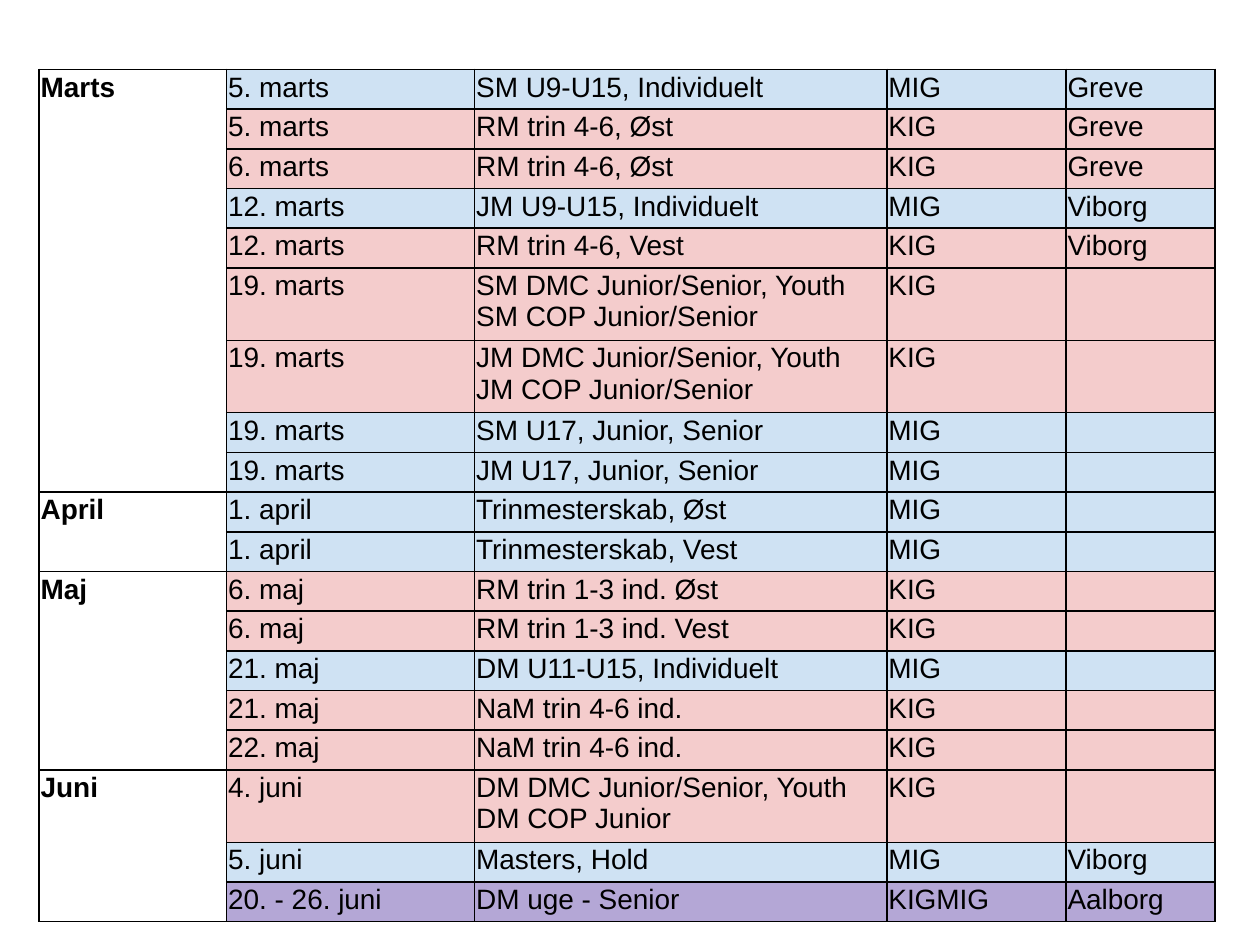
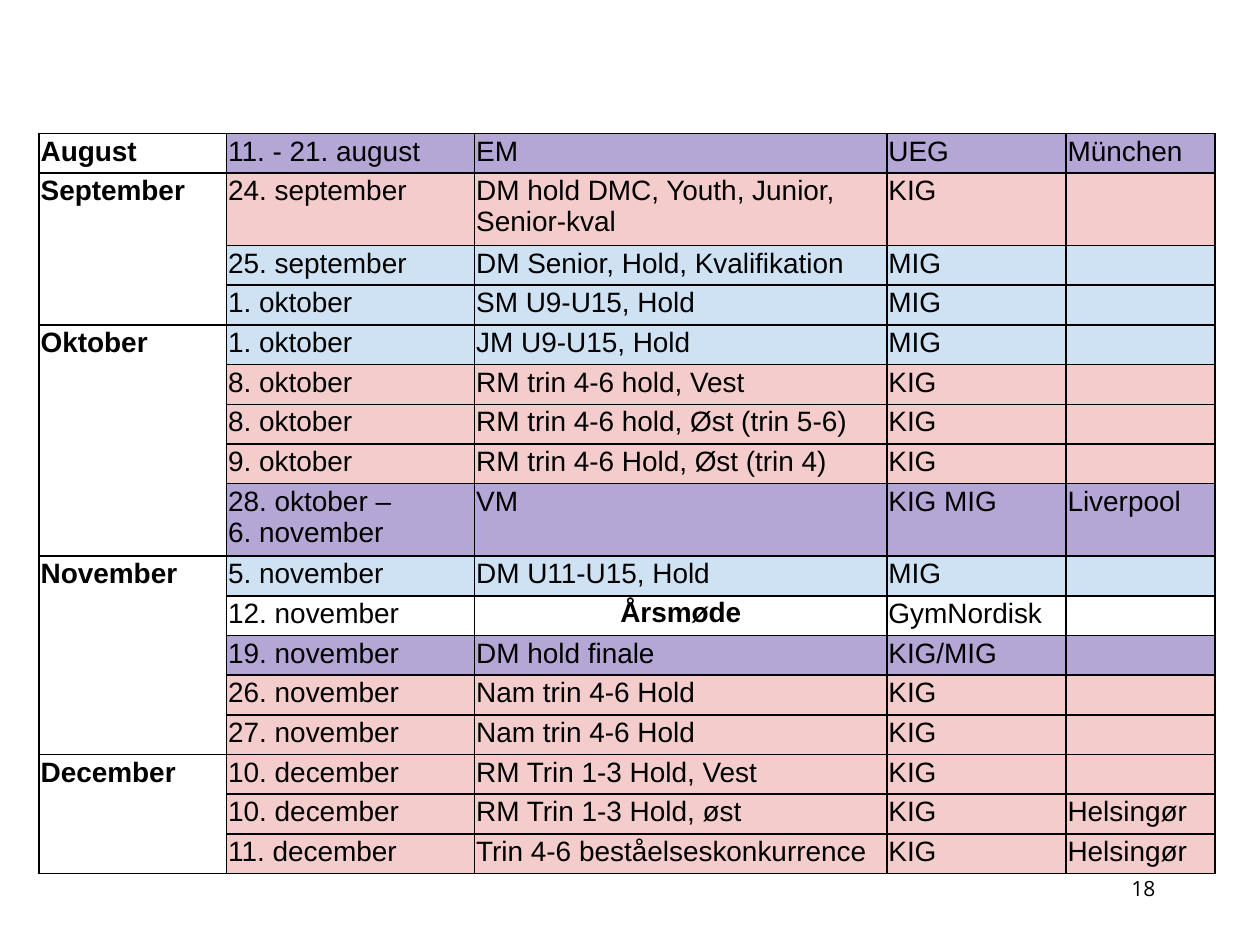
import pptx
import pptx.dml.color
import pptx.enum.text
import pptx.oxml.ns
import pptx.util
from lxml import etree

Cm = pptx.util.Cm
qn = pptx.oxml.ns.qn

HUES = {"ink": "000000", "men": "CFE2F3", "women": "F4CCCC", "joint": "B4A7D6"}
FILLS = {"MIG": "men", "KIG": "women", "GymNordisk": None}  # other hosts: joint

COLS = [3.78, 5, 8.31, 3.61, 3]
ROW, TALL = 0.8, 1.46
WRAP = 35  # longest event text that fits on one line
EDGES = ["a:lnL", "a:lnR", "a:lnT", "a:lnB"]

INSET = {"margin_left": Cm(0.03), "margin_right": Cm(0.03),
         "margin_top": Cm(0.05), "margin_bottom": Cm(0.05)}
SNUG = {"margin_top": Cm(0.03), "margin_bottom": 0}
BODY = {"name": "Arial", "size": pptx.util.Pt(16), "bold": False}
HEAD = {**BODY, "bold": True}
FOOT = {"name": "Open Sans", "size": pptx.util.Pt(12)}

SPRING = {
    "Marts": [
        ("5. marts", "SM U9-U15, Individuelt", "MIG", "Greve"),
        ("5. marts", "RM trin 4-6, Øst", "KIG", "Greve"),
        ("6. marts", "RM trin 4-6, Øst", "KIG", "Greve"),
        ("12. marts", "JM U9-U15, Individuelt", "MIG", "Viborg"),
        ("12. marts", "RM trin 4-6, Vest", "KIG", "Viborg"),
        ("19. marts", "SM DMC Junior/Senior, Youth\vSM COP Junior/Senior", "KIG", ""),
        ("19. marts", "JM DMC Junior/Senior, Youth\vJM COP Junior/Senior", "KIG", ""),
        ("19. marts", "SM U17, Junior, Senior", "MIG", ""),
        ("19. marts", "JM U17, Junior, Senior", "MIG", ""),
    ],
    "April": [
        ("1. april", "Trinmesterskab, Øst", "MIG", ""),
        ("1. april", "Trinmesterskab, Vest", "MIG", ""),
    ],
    "Maj": [
        ("6. maj", "RM trin 1-3 ind. Øst", "KIG", ""),
        ("6. maj", "RM trin 1-3 ind. Vest", "KIG", ""),
        ("21. maj", "DM U11-U15, Individuelt", "MIG", ""),
        ("21. maj", "NaM trin 4-6 ind.", "KIG", ""),
        ("22. maj", "NaM trin 4-6 ind.", "KIG", ""),
    ],
    "Juni": [
        ("4. juni", "DM DMC Junior/Senior, Youth\vDM COP Junior", "KIG", ""),
        ("5. juni", "Masters, Hold", "MIG", "Viborg"),
        ("20. - 26. juni", "DM uge - Senior", "KIGMIG", "Aalborg"),
    ],
}

AUTUMN = {
    "August": [("11. - 21. august", "EM", "UEG", "München")],
    "September": [
        ("24. september", "DM hold DMC, Youth, Junior, Senior-kval", "KIG", ""),
        ("25. september", "DM Senior, Hold, Kvalifikation", "MIG", ""),
        ("1. oktober", "SM U9-U15, Hold", "MIG", ""),
    ],
    "Oktober": [
        ("1. oktober", "JM U9-U15, Hold", "MIG", ""),
        ("8. oktober", "RM trin 4-6 hold, Vest", "KIG", ""),
        ("8. oktober", "RM trin 4-6 hold, Øst (trin 5-6)", "KIG", ""),
        ("9. oktober", "RM trin 4-6 Hold, Øst (trin 4)", "KIG", ""),
        ("28. oktober –\n6. november", "VM", "KIG MIG", "Liverpool"),
    ],
    "November": [
        ("5. november", "DM U11-U15, Hold", "MIG", ""),
        ("12. november", "Årsmøde", "GymNordisk", ""),
        ("19. november", "DM hold finale", "KIG/MIG", ""),
        ("26. november", "Nam trin 4-6 Hold", "KIG", ""),
        ("27. november", "Nam trin 4-6 Hold", "KIG", ""),
    ],
    "December": [
        ("10. december", "RM Trin 1-3 Hold, Vest", "KIG", ""),
        ("10. december", "RM Trin 1-3 Hold, øst", "KIG", "Helsingør"),
        ("11. december", "Trin 4-6 beståelseskonkurrence", "KIG", "Helsingør"),
    ],
}


def apply(target, values):
    for key, value in values.items():
        setattr(target, key, value)


def write(frame, text, style):
    frame.text = text
    for par in frame.paragraphs:
        for run in par.runs:
            apply(run.font, style)
            run.font.color.rgb = pptx.dml.color.RGBColor.from_string(HUES["ink"])
        if not par.runs:  # keeps an empty cell from growing its row
            size = str(int(style["size"].pt * 100))
            etree.SubElement(par._p, qn("a:endParaRPr"), sz=size)


def frame_cell(cell):
    props = cell._tc.get_or_add_tcPr()
    for edge in EDGES:
        line = etree.SubElement(props, qn(edge), w=str(pptx.util.Pt(1)))
        fill = etree.SubElement(line, qn("a:solidFill"))
        etree.SubElement(fill, qn("a:srgbClr"), val=HUES["ink"])


def set_cell(cell, text, style=BODY, hue=None):
    apply(cell, INSET)
    frame_cell(cell)
    if hue:
        cell.fill.solid()
        cell.fill.fore_color.rgb = pptx.dml.color.RGBColor.from_string(HUES[hue])
    else:
        cell.fill.background()
    write(cell.text_frame, text, style)


def is_tall(date, event):
    return "\n" in date or "\v" in event or len(event) > WRAP


def add_plan(slide, months, top):
    """Draw one row per event, with a merged month cell beside each group."""
    count = sum(len(events) for events in months.values())
    table = slide.shapes.add_table(count, len(COLS), Cm(0.79), Cm(top),
                                   Cm(sum(COLS)), Cm(ROW * count)).table
    apply(table, {"first_row": False, "horz_banding": False})
    for col, width in zip(table.columns, COLS):
        col.width = Cm(width)

    row = 0
    for month, events in months.items():
        if len(events) > 1:
            table.cell(row, 0).merge(table.cell(row + len(events) - 1, 0))
        for nth, event in enumerate(events):
            table.rows[row].height = Cm(TALL if is_tall(*event[:2]) else ROW)
            set_cell(table.cell(row, 0), "" if nth else month, HEAD)
            hue = FILLS.get(event[2], "joint")
            for col, text in enumerate(event, 1):
                set_cell(table.cell(row, col), text, BODY, hue)
            if event[1] == "Årsmøde":
                mark_meeting(table.cell(row, 2))
            row += 1


def mark_meeting(cell):
    apply(cell, SNUG)
    par = cell.text_frame.paragraphs[0]
    par.alignment = pptx.enum.text.PP_ALIGN.CENTER
    par.runs[0].font.bold = True


def add_number(slide, text):
    box = slide.shapes.add_textbox(Cm(22.56), Cm(17.53), Cm(1.57), Cm(0.76))
    box.text_frame.word_wrap = True
    write(box.text_frame, text, FOOT)


def main():
    deck = pptx.Presentation()
    apply(deck, {"slide_width": Cm(25.4), "slide_height": Cm(19.05)})
    blank = deck.slide_layouts[6]
    add_plan(deck.slides.add_slide(blank), SPRING, 1.4)
    last = deck.slides.add_slide(blank)
    add_number(last, "18")
    add_plan(last, AUTUMN, 2.69)
    deck.save("out.pptx")


if __name__ == "__main__":
    main()
